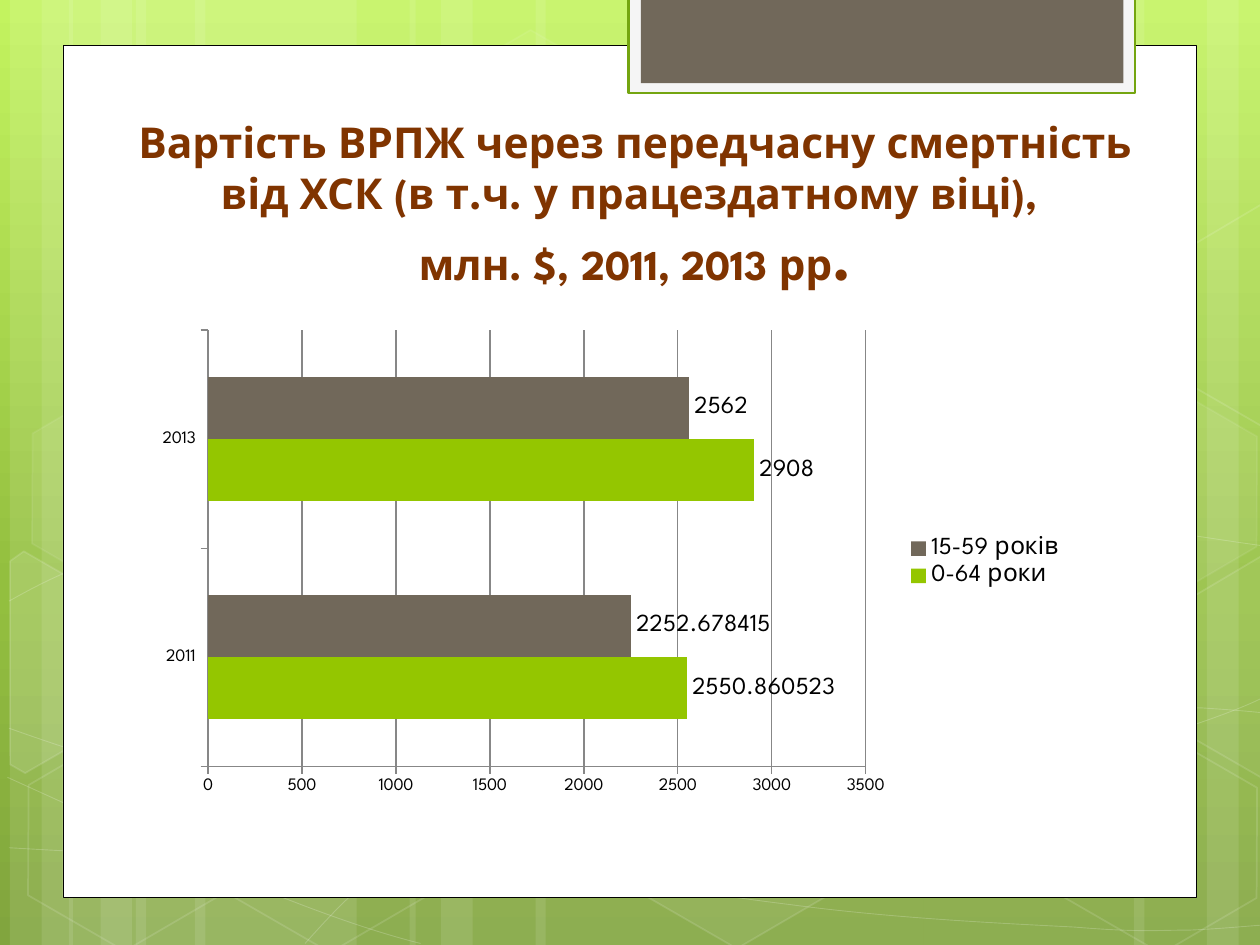
from copy import deepcopy
from dataclasses import dataclass

from lxml import etree
from pptx import Presentation
from pptx import util as u
from pptx.chart import data
from pptx.dml import color
from pptx.enum import chart as ch, shapes, text
from pptx.oxml import ns


@dataclass(frozen=True)
class Theme:
    """Colours, font and type sizes of the slide."""
    sky: tuple = ((0, "C3F35F"), (0.62, "93BF3F"), (1, "81A53E"))
    white: str = "FFFFFF"
    black: str = "000000"
    pale: str = "F5F5F5"
    green: str = "94C600"
    edge: str = "74A510"
    stone: str = "71685A"
    rust: str = "803400"
    grid: str = "878787"
    font: str = "League Spartan"
    head: float = 24.3
    dot: int = 36
    axis: int = 10
    label: int = 14


T = Theme()
STRIPS = [
    (2.74, 4.45), (0.2, 1.27), (0.84, 2.11),
    (3.93, 4.45), (1.39, 1.27), (2.03, 2.11),
    (18.62, 4.45), (24.33, 1.27), (22.86, 2.11),
    (10.8, 7.82), (8.26, 1.27), (8.89, 2.11),
]
WAVES = [
    [(0.18, 17.09), (1.55, 17.17), (2.92, 17.25), (4.83, 17.22),
     (6.73, 17.2), (9.09, 17.15), (11.63, 16.89),
     (14.17, 16.64), (17.78, 16.15), (20.12, 15.67),
     (22.43, 15.19), (24.82, 14.43), (25.58, 14)],
    [(0.18, 12.12), (0.91, 11.71), (1.65, 11.33), (3.07, 10.95),
     (4.52, 10.57), (6.58, 10.01), (8.81, 9.83),
     (11.07, 9.65), (13.82, 9.63), (16.61, 9.83),
     (19.41, 10.03), (24.05, 10.82), (25.58, 11.02)],
    [(0.15, 15.67), (3.23, 17.07), (6.27, 18.47), (8.48, 19.02)],
    [(0.18, 14.68), (0.97, 14.96), (1.78, 15.24), (3.25, 15.65),
     (4.72, 16.03), (6.93, 16.66), (9.07, 17.09),
     (11.18, 17.53), (13.84, 17.98), (15.95, 18.24),
     (18.06, 18.52), (20.32, 18.62), (21.67, 18.69),
     (22.99, 18.8), (23.34, 18.75), (24, 18.75),
     (24.66, 18.72), (25.12, 18.67), (25.58, 18.64)],
    [(6.15, 19.02), (6.6, 18.52), (7.06, 18.01), (7.67, 17.55),
     (8.28, 17.09), (9.14, 16.59), (9.86, 16.23),
     (10.57, 15.88), (11, 15.72), (11.94, 15.47),
     (12.85, 15.21), (14.55, 14.86), (15.44, 14.68),
     (16.36, 14.5), (16.48, 14.5), (17.27, 14.45),
     (18.06, 14.38), (19.3, 14.3), (20.17, 14.27),
     (21.06, 14.25), (22.5, 14.27), (22.5, 14.27),
     (23.07, 14.27), (23.64, 14.27), (24.21, 14.27),
     (24.66, 14.3), (25.1, 14.33), (25.55, 14.38)],
]
HEXES = [
    (8.48, 0.91, 4, 8), (12.62, 14.96, 6, 12), (0.28, 15.01, 0, 12),
    (0.36, 7.92, 7, 8), (4.42, 15.04, 0, 12), (19.13, 11.51, 10, 12),
    (21.18, 15.06, 0, 12), (21.18, 7.98, 7, 8),
]
LEFT = [(0, 0.31), (0.14, 0), (2.4, 0), (3.5, 1.95), (2.4, 3.86), (2.05, 3.86)]
RIGHT = [(0, 1.92), (1.08, 0), (1.32, 0), (3.45, 3.67), (3.34, 3.86), (1.1, 3.86)]
CUTS = [(-0.84, 11.66, LEFT, 10), (23.29, 11.28, RIGHT, 4), (23.29, 4.19, RIGHT, 0)]


def tint(fill, hue, veil=100):
    """Fill with a colour at an opacity in per cent, or leave empty at zero."""
    if not veil:
        fill.background()
        return
    fill.solid()
    fill.fore_color.rgb = color.RGBColor.from_string(hue)
    if veil < 100:
        node = fill._xPr.find(".//" + ns.qn("a:srgbClr"))
        etree.SubElement(node, ns.qn("a:alpha"), val=str(veil * 1000))


def paint(shape, fill, veil=100, line=None, width=1, fade=100):
    """Set the fill and line of a shape and drop its shadow."""
    shape.shadow.inherit = False
    tint(shape.fill, fill, veil)
    tint(shape.line.fill, line, fade if line else 0)
    if line:
        shape.line.width = u.Pt(width)


def block(slide, box, kind=shapes.MSO_SHAPE.RECTANGLE):
    """Add a preset shape in a box given in centimetres."""
    return slide.shapes.add_shape(kind, *map(u.Cm, box))


def trace(slide, left, top, dots, close):
    """Add an outline through points relative to a corner."""
    spots = [(u.Cm(left + x), u.Cm(top + y)) for x, y in dots]
    pen = slide.shapes.build_freeform(*spots[0])
    pen.add_line_segments(spots[1:], close=close)
    return pen.convert_to_shape()


def wave(slide, left, top, knots):
    """Add an open chain of cubic curves."""
    shape = trace(slide, left, top, knots, False)
    legs = shape.element.findall(".//" + ns.qn("a:lnTo"))
    for i in range(0, len(legs), 3):
        bend = etree.SubElement(legs[i].getparent(), ns.qn("a:cubicBezTo"))
        for leg in legs[i:i + 3]:
            bend.append(leg[0])
            leg.getparent().remove(leg)
    return shape


def back(slide, box):
    """Draw the green backdrop with strips, waves and hexagons."""
    left, top, _, high = box
    fill = slide.background.fill
    fill.gradient()
    fill.gradient_angle = 270
    stops = slide.element.find(".//" + ns.qn("a:gsLst"))
    stops.insert(1, deepcopy(stops[0]))
    for stop, (place, hue) in zip(fill.gradient_stops, T.sky):
        stop.position = place
        stop.color.rgb = color.RGBColor.from_string(hue)
    for x, wide in STRIPS:
        paint(block(slide, (left + x, top, wide, high)), T.white, 10)
    for knots in WAVES:
        paint(wave(slide, left, top, knots), T.white, 0, T.white, 0.5, 20)
    for x, y, veil, fade in HEXES:
        cell = block(slide, (left + x, top + y, 4.45, 3.86), shapes.MSO_SHAPE.HEXAGON)
        cell.adjustments[0] = 0.285
        cell.rotation = 30
        paint(cell, T.white, veil, T.white, 1, fade)
    for x, y, dots, veil in CUTS:
        cell = trace(slide, left + x, top + y, dots, True)
        cell.rotation = 30
        paint(cell, T.white, veil, T.white, 1, 12)


def card(slide, box):
    """Draw the white card and the tab hanging over its top edge."""
    left, top, _, _ = box
    paint(block(slide, box), T.white, line=T.black, width=0.5)
    paint(block(slide, (left + 11.4, top - 0.96, 10.21, 1.93)), T.pale,
          line=T.edge, width=1.25)
    paint(block(slide, (left + 11.65, top - 0.96, 9.73, 1.73)), T.stone)


def style(font, size, hue=T.black, bold=False):
    """Set face, size, colour and weight of a font."""
    font.name, font.size, font.bold = T.font, u.Pt(size), bold
    font.color.rgb = color.RGBColor.from_string(hue)


def title(slide, box):
    """Write the heading at the bottom of its box."""
    frame = slide.shapes.add_textbox(*map(u.Cm, box)).text_frame
    frame.word_wrap = True
    frame.vertical_anchor = text.MSO_ANCHOR.BOTTOM
    para = frame.paragraphs[0]
    para.alignment = text.PP_ALIGN.CENTER
    lead = "Вартість ВРПЖ через передчасну смертність від ХСК (в т.ч. у працездатному віці), "
    for words, size in ((lead, T.head), ("млн. $, 2011, 2013 рр", T.head), (".", T.dot)):
        run = para.add_run()
        run.text = words
        style(run.font, size, T.rust, True)
        if words == lead:
            para.add_line_break()


def bars(slide, box):
    """Add the bar chart of costs by year and age group."""
    feed = data.CategoryChartData()
    feed.categories = ["2011", "2013"]
    feed.add_series("0-64 роки", (2550.860523, 2908))
    feed.add_series("15-59 років", (2252.678415, 2562))
    chart = slide.shapes.add_chart(ch.XL_CHART_TYPE.BAR_CLUSTERED,
                                   *map(u.Cm, box), feed).chart
    style(chart.font, T.axis)
    chart.has_title = False
    chart.has_legend = True
    chart.legend.position = ch.XL_LEGEND_POSITION.RIGHT
    chart.legend.include_in_layout = False
    style(chart.legend.font, T.label)
    plot = chart.plots[0]
    plot.gap_width, plot.overlap, plot.vary_by_categories = 150, 0, False
    for row, hue in zip(plot.series, (T.green, T.stone)):
        tint(row.format.fill, hue)
        row.invert_if_negative = False
        row.data_labels.show_value = True
        style(row.data_labels.font, T.label)
    axes = chart.category_axis, chart.value_axis
    for axis in axes:
        axis.major_tick_mark = ch.XL_TICK_MARK.OUTSIDE
    axes[1].has_major_gridlines = True
    for rule in (*axes, axes[1].major_gridlines):
        tint(rule.format.line.fill, T.grid)


def main():
    """Build the slide and save it."""
    deck = Presentation()
    deck.slide_width, deck.slide_height = u.Cm(25.4), u.Cm(19.05)
    slide = deck.slides.add_slide(deck.slide_layouts[6])
    back(slide, (0, 0, 25.4, 19.05))
    card(slide, (1.27, 0.91, 22.86, 17.19))
    title(slide, (2.3, 1.93, 21.01, 4.11))
    bars(slide, (2.9, 6.46, 18.82, 9.75))
    deck.save("out.pptx")


if __name__ == "__main__":
    main()
